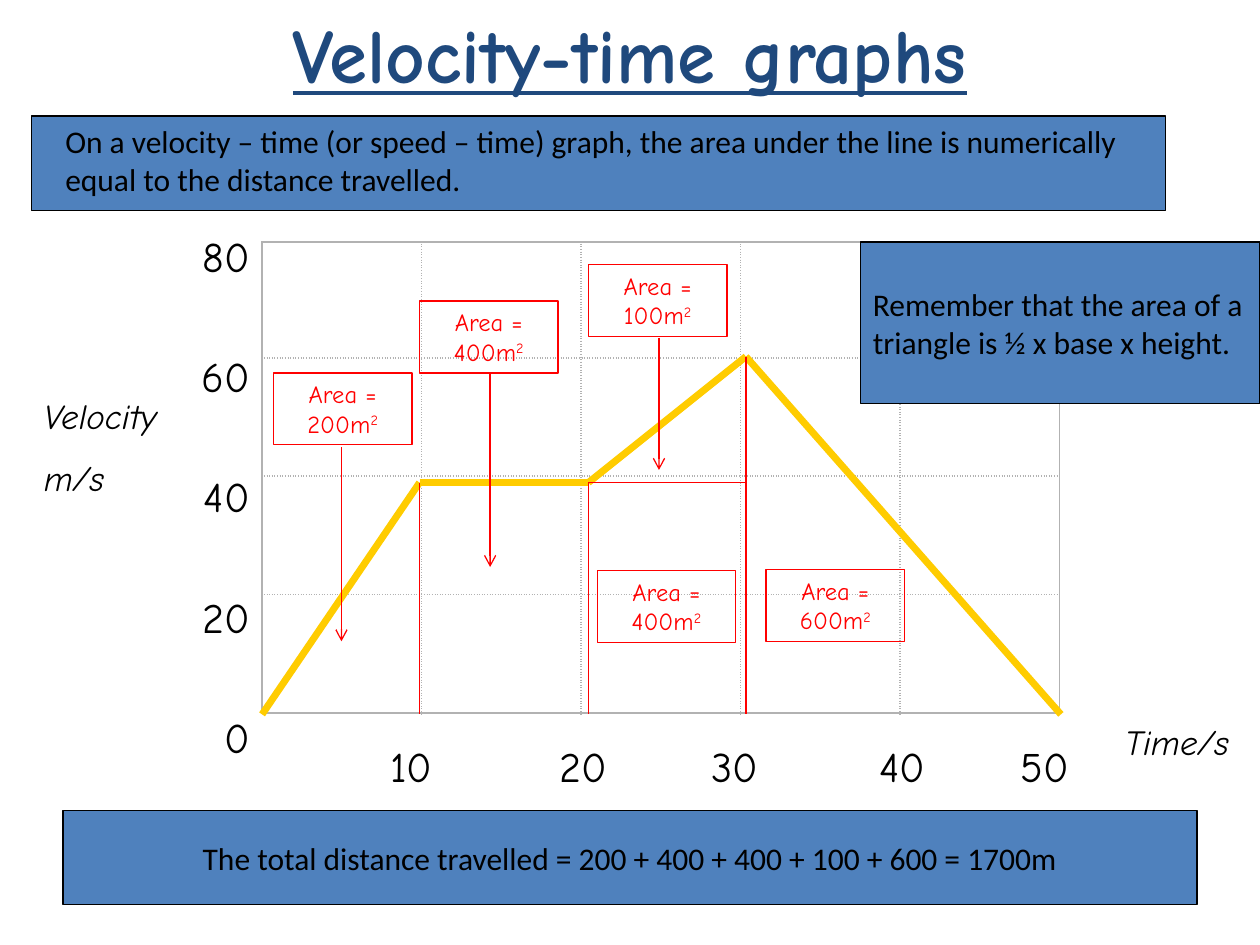
"""Build a slide on finding distance from a velocity-time graph."""
import pptx
import pptx.util
import pptx.oxml
import pptx.oxml.ns
import pptx.dml.color
import pptx.enum.shapes
import pptx.enum.text
from pptx.util import Inches

RGBColor = pptx.dml.color.RGBColor
Align = pptx.enum.text.PP_ALIGN
Anchor = pptx.enum.text.MSO_ANCHOR

NAVY = RGBColor(0x1F, 0x49, 0x7D)
BLUE = RGBColor(0x4F, 0x81, 0xBD)
BLACK = RGBColor(0, 0, 0)
RED = RGBColor(0xFF, 0, 0)
YELLOW = RGBColor(0xFF, 0xCC, 0)
GREY = RGBColor(0xB2, 0xB2, 0xB2)
HAND = "Comic Neue"
PLAIN = "Calibri"


def add_xml(parent, tag, **attributes):
    child = pptx.oxml.parse_xml(f"<a:{tag} {pptx.oxml.ns.nsdecls('a')}/>")
    for name, value in attributes.items():
        child.set(name, str(value))
    parent.append(child)
    return child


class GraphSlide:
    def __init__(self, deck):
        self.slide = deck.slides.add_slide(deck.slide_layouts[5])
        self.shapes = self.slide.shapes

    def style(self, frame, size, font=HAND, color=BLACK, align=Align.LEFT, italic=False):
        for para in frame.paragraphs:
            para.alignment = align
            for span in para.runs:
                span.font.size = pptx.util.Pt(size)
                span.font.name = font
                span.font.color.rgb = color
                span.font.italic = italic

    def title(self, words):
        box = self.shapes.title
        box.left, box.top, box.width, box.height = map(Inches, (0, 0, 10, 0.84))
        frame = box.text_frame
        frame.text = words
        frame.vertical_anchor = Anchor.MIDDLE
        self.style(frame, 44, color=NAVY, align=Align.CENTER)
        font = frame.paragraphs[0].runs[0].font
        font.bold = font.underline = True

    def label(self, place, words, size, gap=0, spacing=None, **look):
        frame = self.shapes.add_textbox(*map(Inches, place)).text_frame
        frame.word_wrap = True
        frame.text = words
        self.style(frame, size, **look)
        for number, para in enumerate(frame.paragraphs):
            para.line_spacing = spacing
            para.space_before = pptx.util.Pt(gap if number else 0)
        return frame

    def time_axis(self, place, words, stops):
        frame = self.label(place, "\t".join(words), 24)
        tabs = add_xml(frame.paragraphs[0]._p.get_or_add_pPr(), "tabLst")
        for stop in stops:
            add_xml(tabs, "tab", pos=Inches(stop), algn="l")

    def rectangle(self, place, line, fill=None):
        kind = pptx.enum.shapes.MSO_SHAPE.RECTANGLE
        box = self.shapes.add_shape(kind, *map(Inches, place))
        box.shadow.inherit = False
        box.line.color.rgb = line
        box.line.width = pptx.util.Pt(0.75)
        if fill is None:
            box.fill.background()
        else:
            box.fill.solid()
            box.fill.fore_color.rgb = fill
        return box

    def panel(self, place, words="", align=Align.LEFT):
        frame = self.rectangle(place, BLACK, BLUE).text_frame
        frame.text = words
        frame.word_wrap = False
        frame.vertical_anchor = Anchor.MIDDLE
        self.style(frame, 18, font=PLAIN, align=align)

    def area(self, left, top, metres):
        frame = self.rectangle((left, top, 1.1, 0.57), RED).text_frame
        frame.word_wrap = True
        frame.vertical_anchor = Anchor.TOP
        frame.text = f"Area = {metres}m"
        power = frame.paragraphs[0].add_run()
        power.text = "2"
        self.style(frame, 14, color=RED, align=Align.CENTER)
        power._r.get_or_add_rPr().set("baseline", "30000")

    def line(self, start, end, color=RED, width=0.75, arrow=False):
        kind = pptx.enum.shapes.MSO_CONNECTOR.STRAIGHT
        link = self.shapes.add_connector(kind, *map(Inches, start + end))
        link.line.color.rgb = color
        link.line.width = pptx.util.Pt(width)
        if arrow:
            add_xml(link.line._get_or_add_ln(), "tailEnd", type="arrow")
        add_xml(link._element.spPr, "effectLst")

    def border(self, cell, side, solid):
        edge = add_xml(cell._tc.get_or_add_tcPr(), f"ln{side}", w=pptx.util.Pt(1))
        add_xml(add_xml(edge, "solidFill"), "srgbClr", val=GREY)
        add_xml(edge, "prstDash", val="solid" if solid else "sysDot")

    def grid(self, place, heights, columns):
        rows = len(heights)
        table = self.shapes.add_table(rows, columns, *map(Inches, place)).table
        table.first_row = table.horz_banding = False
        for row, height in zip(table.rows, heights):
            row.height = Inches(height)
        for y in range(rows):
            for x in range(columns):
                cell = table.cell(y, x)
                outer = {"L": x == 0, "R": x == columns - 1, "T": y == 0, "B": y == rows - 1}
                for side, solid in outer.items():
                    self.border(cell, side, solid)
                cell.fill.background()


def main():
    deck = pptx.Presentation()
    deck.slide_width, deck.slide_height = Inches(10), Inches(7.5)
    page = GraphSlide(deck)
    page.title("Velocity-time graphs")

    page.grid((2.08, 1.92, 6.33, 3.75), (0.92, 0.94, 0.94, 0.94), 5)
    speeds = "\n".join(str(speed) for speed in range(80, -1, -20))
    page.label((1.25, 1.42, 0.83, 4.69), speeds, 24, gap=14, spacing=1.9, align=Align.RIGHT)
    times = [str(time) for time in range(10, 51, 10)]
    page.time_axis((3, 5.83, 6.17, 0.5), times, (1.34, 2.55, 3.88, 5))

    journey = [(2.08, 5.67), (3.33, 3.83), (4.67, 3.83), (5.92, 2.83), (8.42, 5.67)]
    for start, end in zip(journey, journey[1:]):
        page.line(start, end, YELLOW, 4)
    page.label((0.25, 3.08, 1.58, 0.93), "Velocity\nm/s", 20, gap=11.5, italic=True)
    page.label((8.83, 5.67, 1.17, 0.43), "Time/s", 20, italic=True)

    page.panel((0.25, 0.92, 9, 0.75))
    page.label(
        (0.42, 0.92, 8.67, 0.71),
        "On a velocity – time (or speed – time) graph, the area under the line "
        "is numerically equal to the distance travelled.",
        18,
        font=PLAIN,
    )
    page.panel(
        (6.83, 1.92, 3.17, 1.28),
        "Remember that the area of a\ntriangle is ½ x base x height.",
    )

    for x, y in journey[1:4]:
        page.line((x, y), (x, 5.67))
    page.line((4.67, 3.83), (5.92, 3.83))

    areas = [
        (2.17, 2.96, 200), (3.33, 2.39, 400), (4.74, 4.53, 400),
        (4.67, 2.1, 100), (6.08, 4.52, 600),
    ]
    for left, top, metres in areas:
        page.area(left, top, metres)
    for x, top, bottom in [(2.71, 3.55, 5.09), (3.89, 2.96, 4.5), (5.23, 2.68, 3.73)]:
        page.line((x, top), (x, bottom), arrow=True)

    page.panel(
        (0.5, 6.43, 9, 0.75),
        "The total distance travelled = 200 + 400 + 400 + 100 + 600 = 1700m",
        Align.CENTER,
    )
    deck.save("out.pptx")


if __name__ == "__main__":
    main()
